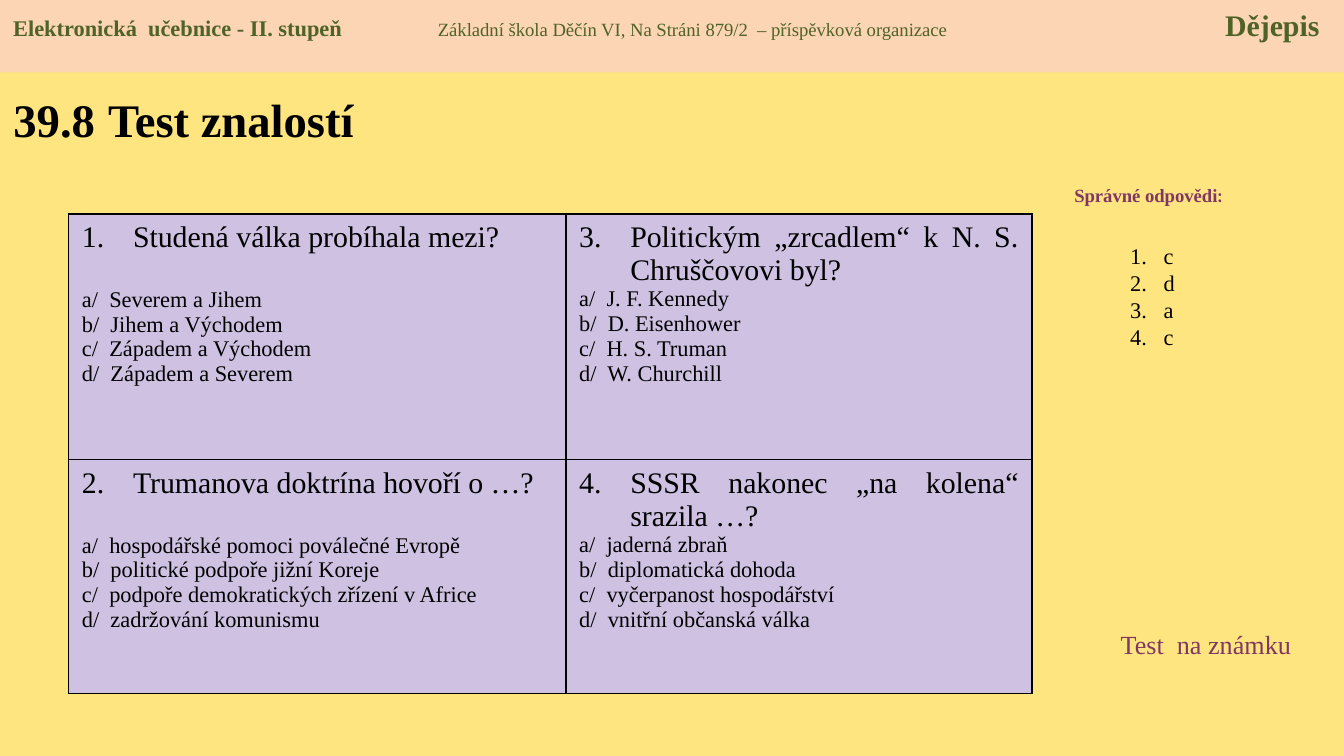
from lxml import etree
from pptx import Presentation
from pptx.dml.color import RGBColor
from pptx.enum import shapes, text
from pptx.oxml import ns
from pptx.util import Inches, Pt

BACKGROUND = RGBColor(0xFF, 0xE5, 0x80)
PEACH = RGBColor(0xFC, 0xD5, 0xB5)
LILAC = RGBColor(0xCE, 0xC1, 0xE2)
GREEN = RGBColor(0x4F, 0x62, 0x28)
PLUM = RGBColor(0x81, 0x37, 0x63)
BLACK = RGBColor(0, 0, 0)
FONT = "Times New Roman"
PAGE_WIDTH = 10
PAGE_HEIGHT = PAGE_WIDTH * 9 / 16

HEADER = [
    ("Elektronická  učebnice - II. stupeň", 12, True),
    ("\tZákladní škola Děčín VI, Na Stráni 879/2  – příspěvková organizace", 10, False),
    ("\tDějepis", 16, True),
]
HEADER_TABS = [(3.16, "l"), (9.72, "r")]
TITLE = [("39.8", 25), (" ", 28), ("Test znalostí", 25)]

# Question, space before its choices in points, choices; numbered down the columns
QUESTIONS = [
    ("Studená válka probíhala mezi?", 18,
     ["a/  Severem a Jihem", "b/  Jihem a Východem",
      "c/  Západem a Východem", "d/  Západem a Severem"]),
    ("Trumanova doktrína hovoří o …?", 18,
     ["a/  hospodářské pomoci poválečné Evropě", "b/  politické podpoře jižní Koreje",
      "c/  podpoře demokratických zřízení v Africe", "d/  zadržování komunismu"]),
    ("Politickým „zrcadlem“ k N. S. Chruščovovi byl?", 0,
     ["a/  J. F. Kennedy", "b/  D. Eisenhower", "c/  H. S. Truman", "d/  W. Churchill"]),
    ("SSSR nakonec „na kolena“ srazila …?", 0,
     ["a/  jaderná zbraň", "b/  diplomatická dohoda",
      "c/  vyčerpanost hospodářství", "d/  vnitřní občanská válka"]),
]
COLUMN_WIDTHS = [3.7, 3.47]
ROW_HEIGHTS = [1.83, 1.74]
ANSWERS = ["c", "d", "a", "c"]


def add_span(para, words, size, color=BLACK, bold=False, font=FONT):
    span = para.add_run()
    span.text = words
    span.font.name = font
    span.font.size = Pt(size)
    span.font.bold = bold
    span.font.color.rgb = color


def add_element(parent, tag, **attributes):
    return etree.SubElement(parent, ns.qn(tag), attributes)


def hang(para, indent, number=None):
    """Give a hanging indent and, if asked, an automatic number."""
    props = para._p.get_or_add_pPr()
    props.set("marL", str(Inches(indent)))
    props.set("indent", str(-Inches(indent)))
    if number:
        add_element(props, "a:buFont", typeface=FONT)
        add_element(props, "a:buAutoNum", type="arabicPeriod", startAt=str(number))


def next_para(frame, index):
    return frame.add_paragraph() if index else frame.paragraphs[0]


def add_box(page, left, top, width, height):
    frame = page.shapes.add_textbox(*map(Inches, (left, top, width, height))).text_frame
    frame.word_wrap = True
    return frame


def outline_cell(cell):
    props = cell._tc.get_or_add_tcPr()
    for position, side in enumerate(("a:lnL", "a:lnR", "a:lnT", "a:lnB")):
        line = etree.Element(ns.qn(side), w=str(Pt(1)))
        fill = add_element(line, "a:solidFill")
        add_element(fill, "a:srgbClr", val=str(BLACK))
        props.insert(position, line)


def fill_cell(cell, number, question, gap, choices):
    cell.fill.solid()
    cell.fill.fore_color.rgb = LILAC
    outline_cell(cell)
    for index, words in enumerate([question, *choices]):
        para = next_para(cell.text_frame, index)
        hang(para, 0.38, None if index else number)
        para.alignment = text.PP_ALIGN.JUSTIFY
        if index == 1:
            para.space_before = Pt(gap)
        add_span(para, words, 12 if index else 16)


def add_title(page):
    title = page.shapes.title
    title.left, title.top, title.width, title.height = map(Inches, (0, 0.54, 3.19, 0.65))
    title.text_frame.vertical_anchor = text.MSO_ANCHOR.MIDDLE
    title.text_frame.auto_size = text.MSO_AUTO_SIZE.NONE
    para = title.text_frame.paragraphs[0]
    para.alignment = text.PP_ALIGN.LEFT
    for words, size in TITLE:
        add_span(para, words, size, bold=True)


def add_test(page):
    table = page.shapes.add_table(
        len(ROW_HEIGHTS), len(COLUMN_WIDTHS), Inches(0.51), Inches(1.59),
        Inches(sum(COLUMN_WIDTHS)), Inches(sum(ROW_HEIGHTS))).table
    table.first_row = table.horz_banding = False
    for column, width in zip(table.columns, COLUMN_WIDTHS):
        column.width = Inches(width)
    for row, height in zip(table.rows, ROW_HEIGHTS):
        row.height = Inches(height)
    for index, question in enumerate(QUESTIONS):
        column, row = divmod(index, len(ROW_HEIGHTS))
        fill_cell(table.cell(row, column), index + 1, *question)


def add_answers(page):
    heading = add_box(page, 7.76, 1.32, 1.57, 0.27).paragraphs[0]
    heading.alignment = text.PP_ALIGN.CENTER
    add_span(heading, "Správné odpovědi", 10, PLUM, True)
    add_span(heading, ":", 10, PLUM, True, "Calibri")

    frame = add_box(page, 8.31, 1.75, 0.55, 1.11)
    for index, answer in enumerate(ANSWERS):
        para = next_para(frame, index)
        hang(para, 0.25, index + 1)
        para.line_spacing = Pt(14.5)
        add_span(para, answer, 12)


def add_header(page):
    bar = page.shapes.add_shape(
        shapes.MSO_SHAPE.RECTANGLE, 0, 0, Inches(PAGE_WIDTH), Inches(0.54))
    bar.shadow.inherit = False
    bar.fill.solid()
    bar.fill.fore_color.rgb = PEACH
    bar.line.fill.background()
    bar.text_frame.vertical_anchor = text.MSO_ANCHOR.TOP
    para = bar.text_frame.paragraphs[0]
    para.alignment = text.PP_ALIGN.LEFT
    tabs = add_element(para._p.get_or_add_pPr(), "a:tabLst")
    for place, side in HEADER_TABS:
        add_element(tabs, "a:tab", pos=str(Inches(place)), algn=side)
    for words, size, bold in HEADER:
        add_span(para, words, size, GREEN, bold)


def main():
    deck = Presentation()
    deck.slide_width, deck.slide_height = Inches(PAGE_WIDTH), Inches(PAGE_HEIGHT)
    page = deck.slides.add_slide(deck.slide_layouts[5])
    page.background.fill.solid()
    page.background.fill.fore_color.rgb = BACKGROUND
    add_title(page)
    add_test(page)
    add_answers(page)
    grade_note = add_box(page, 8.24, 4.63, 1.57, 0.34)
    add_span(grade_note.paragraphs[0], "Test  na známku", 14, PLUM)
    add_header(page)
    deck.save("out.pptx")


if __name__ == "__main__":
    main()
